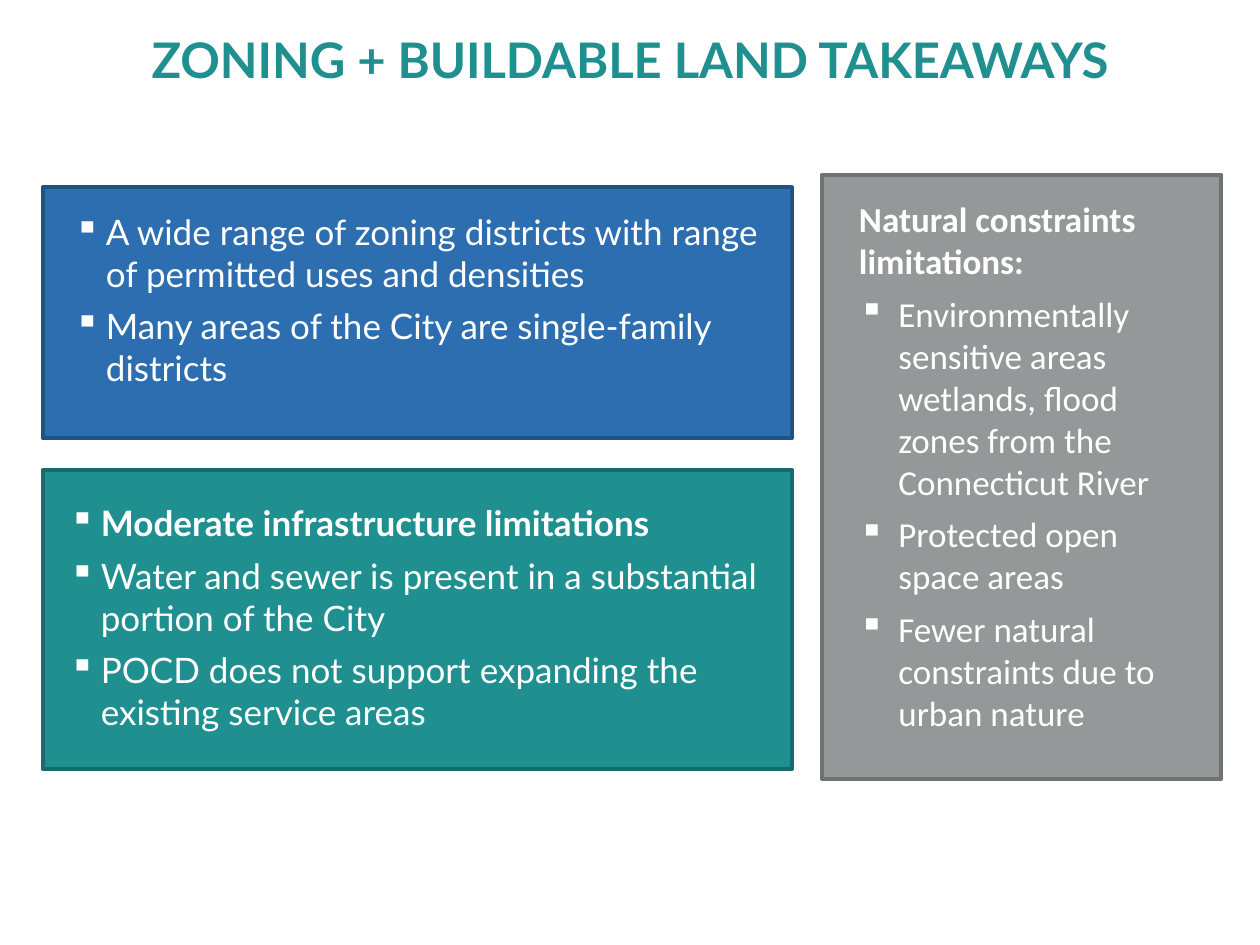
from lxml import etree
from pptx import Presentation
from pptx.dml.color import RGBColor
from pptx.enum.shapes import MSO_SHAPE
from pptx.enum.text import MSO_ANCHOR, PP_ALIGN
from pptx.oxml.ns import qn
from pptx.util import Pt

RECTANGLE = MSO_SHAPE.RECTANGLE
CENTER = PP_ALIGN.CENTER
MIDDLE, TOP = MSO_ANCHOR.MIDDLE, MSO_ANCHOR.TOP
TEAL, BLUE, GRAY, WHITE = "1F8F90", "2C6EB0", "959898", "FFFFFF"


def color(hex_value):
    return RGBColor.from_string(hex_value)


class TakeawaySlide:
    """Holds the text style and the slide, and draws its elements."""

    body_size = 20
    paragraph_gap = 6

    def __init__(self, slide):
        self.slide = slide

    def panel(self, left, top, width, height, fill, border):
        panel = self.slide.shapes.add_shape(
            RECTANGLE, Pt(left), Pt(top), Pt(width), Pt(height))
        panel.shadow.inherit = False
        panel.fill.solid()
        panel.fill.fore_color.rgb = color(fill)
        panel.line.color.rgb = color(border)
        panel.line.width = Pt(2.25)

    def frame(self, left, top, width, height, anchor=TOP):
        frame = self.slide.shapes.add_textbox(
            Pt(left), Pt(top), Pt(width), Pt(height)).text_frame
        frame.word_wrap = True
        frame.vertical_anchor = anchor
        return frame

    def style(self, paragraph, font_name, size, hex_value, bold):
        for run in paragraph.runs:
            run.font.name = font_name
            run.font.size = Pt(size)
            run.font.color.rgb = color(hex_value)
            run.font.bold = bold

    def bullet(self, paragraph, indent):
        properties = paragraph._p.get_or_add_pPr()
        properties.set("marL", str(Pt(indent)))
        properties.set("indent", str(-Pt(indent)))
        bullet_color = etree.SubElement(properties, qn("a:buClr"))
        etree.SubElement(bullet_color, qn("a:srgbClr"), val=WHITE)
        etree.SubElement(properties, qn("a:buChar"), char="▪")

    def title(self, text, left, top, width, height):
        heading = self.frame(left, top, width, height, MIDDLE).paragraphs[0]
        heading.text = text
        heading.alignment = CENTER
        heading.line_spacing = 0.9
        self.style(heading, "Lato", 28, TEAL, True)

    def takeaways(self, lines, left, top, width, height, indent,
                  font_name="Lato", bold_lead=False, bullet_lead=True):
        frame = self.frame(left, top, width, height)
        frame.text = "\n".join(lines)
        for position, paragraph in enumerate(frame.paragraphs):
            is_lead = position == 0
            if not is_lead:
                paragraph.space_before = Pt(self.paragraph_gap)
            if bullet_lead or not is_lead:
                self.bullet(paragraph, indent)
            self.style(paragraph, font_name, self.body_size, WHITE,
                       bold_lead and is_lead)


def main():
    deck = Presentation()
    deck.slide_width, deck.slide_height = Pt(720), Pt(540)
    page = TakeawaySlide(deck.slides.add_slide(deck.slide_layouts[6]))

    page.title("ZONING + BUILDABLE LAND TAKEAWAYS", 49, 11.5, 622, 48)

    page.panel(24.5, 268.5, 428, 171, TEAL, "176B6C")
    page.panel(24.5, 107, 428, 143.5, BLUE, "215284")
    page.panel(469.5, 100, 228.5, 345, GRAY, "6F7272")

    page.takeaways([
        "A wide range of zoning districts with range of permitted uses "
        "and densities",
        "Many areas of the City are single-family districts",
    ], 35.5, 116.5, 427, 140, 18)
    page.takeaways([
        "Natural constraints limitations:",
        "Environmentally sensitive areas wetlands, flood zones from the "
        "Connecticut River",
        "Protected open space areas",
        "Fewer natural constraints due to urban nature",
    ], 483.75, 109.5, 204, 316, 22.5, "Calibri",
        bold_lead=True, bullet_lead=False)
    page.takeaways([
        "Moderate infrastructure limitations",
        "Water and sewer is present in a substantial portion of the City",
        "POCD does not support expanding the existing service areas",
    ], 32.5, 283, 414, 201, 18, bold_lead=True)

    deck.save("out.pptx")


if __name__ == "__main__":
    main()
